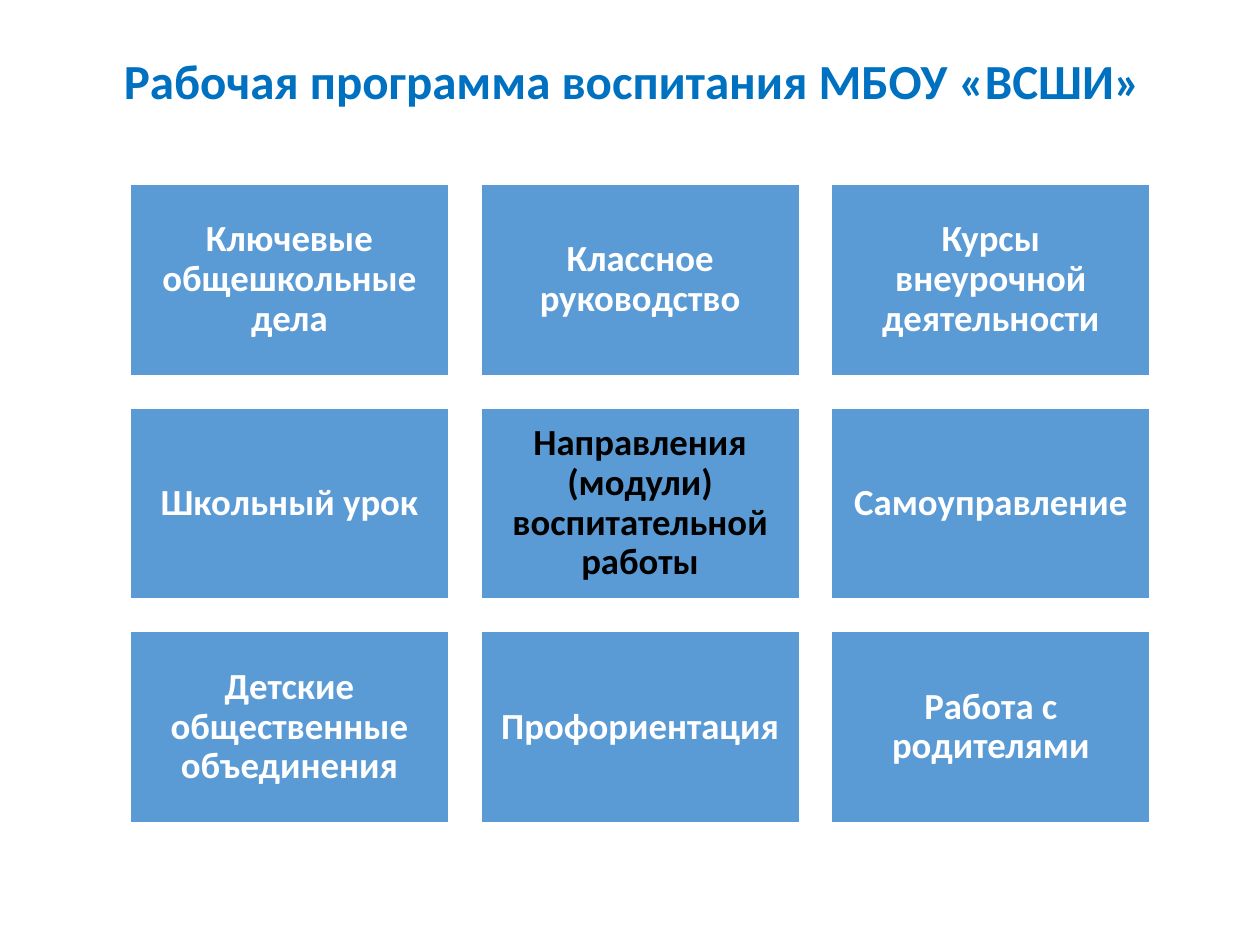
from pptx import Presentation
from pptx.dml.color import RGBColor
from pptx.enum.shapes import MSO_SHAPE
from pptx.enum.text import MSO_ANCHOR, MSO_AUTO_SIZE, PP_ALIGN
from pptx.util import Cm, Pt

RECTANGLE = MSO_SHAPE.RECTANGLE
MIDDLE = MSO_ANCHOR.MIDDLE
CENTER = PP_ALIGN.CENTER
NO_AUTOFIT = MSO_AUTO_SIZE.NONE

TITLE_ONLY = 5
FONT = "Calibri"
TITLE_BLUE = "0070C0"
BLOCK_BLUE = "5B9BD5"
WHITE = "FFFFFF"
BLACK = "000000"

TITLE = "Рабочая программа воспитания МБОУ «ВСШИ»"
CENTRAL_TOPIC = "Направления (модули) воспитательной работы"
MODULES = [
    ["Ключевые общешкольные дела", "Классное руководство",
     "Курсы внеурочной деятельности"],
    ["Школьный урок", CENTRAL_TOPIC, "Самоуправление"],
    ["Детские общественные объединения", "Профориентация",
     "Работа с родителями"],
]

GRID_LEFT, GRID_TOP = 2.62, 3.71
BLOCK_WIDTH, BLOCK_HEIGHT = 6.43, 3.86
COLUMN_STEP, ROW_STEP = 7.07, 4.51


def color(hex_string):
    return RGBColor.from_string(hex_string)


def write_text(shape, text, size, font_color, margin=0.25, space_after=0):
    """Put one bold, centred paragraph into the shape; margin is in cm."""
    frame = shape.text_frame
    frame.word_wrap = True
    frame.auto_size = NO_AUTOFIT
    frame.vertical_anchor = MIDDLE
    frame.margin_left = frame.margin_right = Cm(margin)
    frame.margin_top = frame.margin_bottom = Cm(margin)
    paragraph = frame.paragraphs[0]
    paragraph.alignment = CENTER
    paragraph.line_spacing = 0.9
    paragraph.space_before = Pt(0)
    paragraph.space_after = Pt(space_after)
    run = paragraph.add_run()
    run.text = text
    run.font.name = FONT
    run.font.size = Pt(size)
    run.font.bold = True
    run.font.color.rgb = color(font_color)


def set_title(slide, text):
    title = slide.shapes.title
    title.left, title.top = Cm(2.01), Cm(1.04)
    title.width, title.height = Cm(21.46), Cm(1.3)
    write_text(title, text, size=28, font_color=TITLE_BLUE, margin=0.1)


def add_block(slide, text, left, top, font_color):
    block = slide.shapes.add_shape(
        RECTANGLE, Cm(left), Cm(top), Cm(BLOCK_WIDTH), Cm(BLOCK_HEIGHT))
    block.shadow.inherit = False
    block.fill.solid()
    block.fill.fore_color.rgb = color(BLOCK_BLUE)
    block.line.color.rgb = color(WHITE)
    block.line.width = Pt(1)
    write_text(block, text, size=21, font_color=font_color, margin=0.23,
               space_after=7.35)


def add_module_grid(slide):
    for row, names in enumerate(MODULES):
        for column, name in enumerate(names):
            add_block(slide, name,
                      left=GRID_LEFT + column * COLUMN_STEP,
                      top=GRID_TOP + row * ROW_STEP,
                      font_color=BLACK if name == CENTRAL_TOPIC else WHITE)


def main():
    presentation = Presentation()
    presentation.slide_width = Cm(25.4)
    presentation.slide_height = Cm(19.05)
    slide = presentation.slides.add_slide(
        presentation.slide_layouts[TITLE_ONLY])
    set_title(slide, TITLE)
    add_module_grid(slide)
    presentation.save("out.pptx")


if __name__ == "__main__":
    main()
